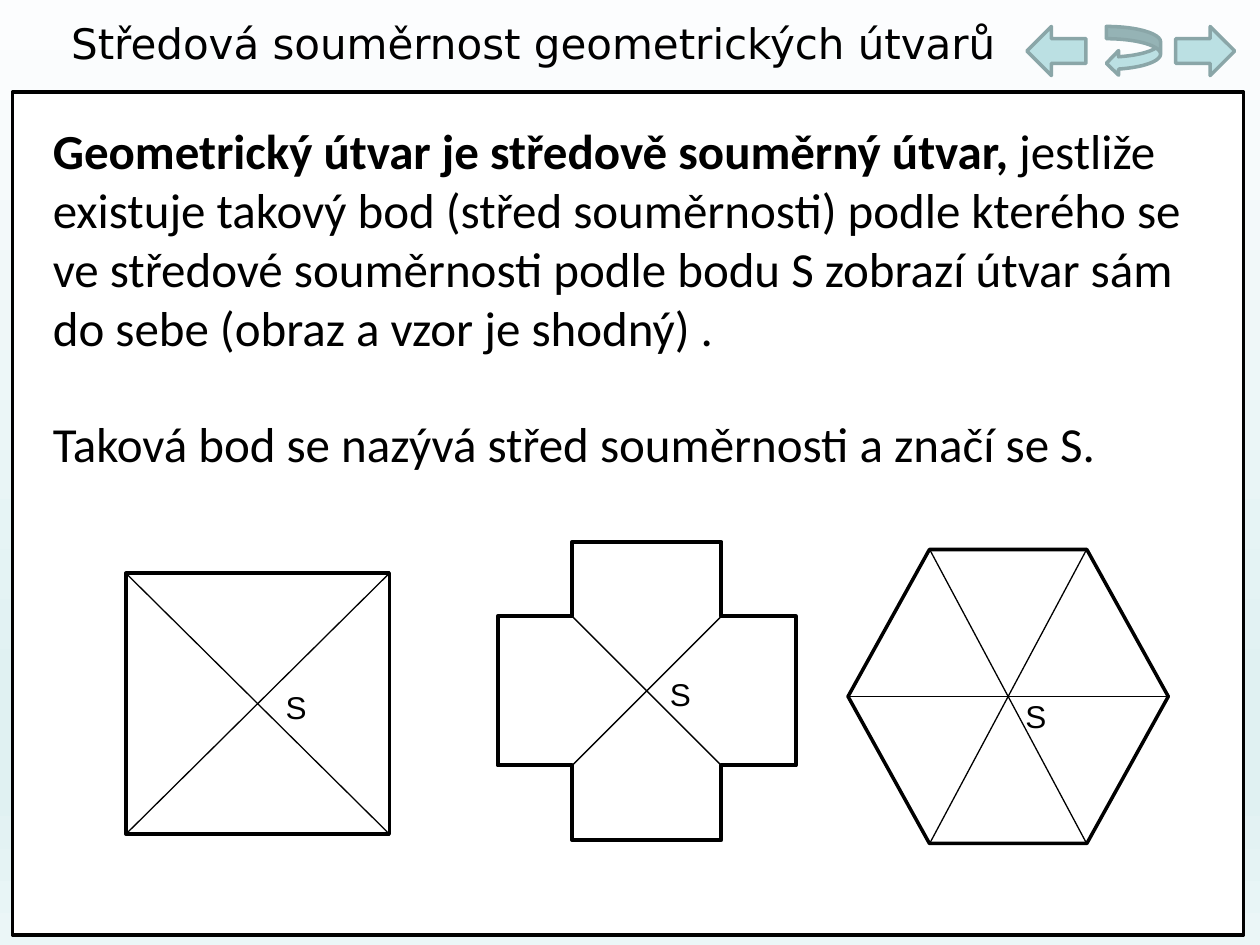
from dataclasses import dataclass

from lxml import etree
from pptx import Presentation
from pptx.dml.color import RGBColor
from pptx.enum import shapes, text
from pptx.oxml.ns import qn
from pptx.util import Pt

COLORS = {"black": "000000", "white": "FFFFFF", "arrow": "BBE0E3", "arrow_edge": "8AA6A8"}
BACKGROUND = [(0, "FCFDFE"), (74, "E0F1F2"), (83, "E0F1F2"), (100, "EBF6F7")]
MSO = shapes.MSO_SHAPE


@dataclass
class Box:
    x: float
    y: float
    w: float
    h: float

    def lengths(self) -> tuple:
        return Pt(self.x), Pt(self.y), Pt(self.w), Pt(self.h)


@dataclass
class Figure:
    """Symmetric figure; spokes start at fractions of its box and pass through S."""
    kind: MSO
    box: Box
    spokes: list
    label: tuple
    weight: float = 2
    adjust: float | None = None


@dataclass
class Passage:
    box: Box
    runs: list


FRAME = Box(7.2, 52.6, 703.4, 481.7)
TITLE = Box(9.4, 6.5, 591, 42.5)
NAVIGATION = [
    (MSO.RIGHT_ARROW, Box(671.8, 15.1, 33.8, 28.1)),
    (MSO.LEFT_ARROW, Box(586.8, 15.1, 33.8, 28.1)),
    (MSO.CURVED_LEFT_ARROW, Box(632.2, 15.1, 31, 28.1)),
]
PASSAGES = [
    Passage(Box(23, 60.5, 666, 151.2), [
        ("Geometrický útvar je středově souměrný útvar, ", True),
        ("jestliže existuje takový bod (střed souměrnosti) podle kterého se ve středové "
         "souměrnosti podle bodu S zobrazí útvar sám do sebe (obraz a vzor je shodný) .", False),
    ]),
    Passage(Box(23, 221.8, 671.8, 62.6),
            [("Taková bod se nazývá střed souměrnosti a značí se S.", False)]),
]
FIGURES = [
    Figure(MSO.RECTANGLE, Box(72, 327.6, 150.5, 149), [(0, 0), (0, 1)], (156.2, 389.5)),
    Figure(MSO.CROSS, Box(284.4, 309.6, 170.4, 170.4), [(0.25, 0.25), (0.25, 0.75)],
           (375.8, 382.3), weight=2.25),
    Figure(MSO.HEXAGON, Box(484.6, 314, 183, 168), [(0.255, 1), (0, 0.5), (0.255, 0)],
           (578.9, 394.6), adjust=0.277),
]


def rgb(name: str) -> RGBColor:
    return RGBColor.from_string(COLORS[name])


def set_background(slide) -> None:
    fill = slide.background.fill
    fill.gradient()
    fill.gradient_angle = 270
    stops = slide.element.find(".//" + qn("a:gsLst"))
    for stop in list(stops):
        stops.remove(stop)
    for percent, color in BACKGROUND:
        stop = etree.SubElement(stops, qn("a:gs"), pos=str(percent * 1000))
        etree.SubElement(stop, qn("a:srgbClr"), val=color)


def format_run(r, font: str, size: float, bold: bool = False) -> None:
    r.font.name, r.font.size, r.font.bold = font, Pt(size), bold
    r.font.color.rgb = rgb("black")


def place(sp, box: Box) -> None:
    sp.left, sp.top, sp.width, sp.height = box.lengths()


def add_outline(slide, kind: MSO, box: Box, fill: str | None = None,
                line: str = "black", weight: float = 2):
    sp = slide.shapes.add_shape(kind, *box.lengths())
    sp.shadow.inherit = False
    if fill:
        sp.fill.solid()
        sp.fill.fore_color.rgb = rgb(fill)
    else:
        sp.fill.background()
    sp.line.color.rgb = rgb(line)
    sp.line.width = Pt(weight)
    return sp


def add_spoke(slide, box: Box, fx: float, fy: float) -> None:
    """Draw a line from a point of the box to its image through the centre."""
    ends = [Pt(v) for px, py in ((fx, fy), (1 - fx, 1 - fy))
            for v in (box.x + px * box.w, box.y + py * box.h)]
    line = slide.shapes.add_connector(shapes.MSO_CONNECTOR.STRAIGHT, *ends)
    line.line.color.rgb = rgb("black")
    line.line.width = Pt(0.75)
    etree.SubElement(line._element.spPr, qn("a:effectLst"))


def add_figure(slide, figure: Figure) -> None:
    sp = add_outline(slide, figure.kind, figure.box, weight=figure.weight)
    if figure.adjust is not None:
        sp.adjustments[0] = figure.adjust
    for fx, fy in figure.spokes:
        add_spoke(slide, figure.box, fx, fy)
    label = slide.shapes.add_textbox(*Box(*figure.label, 31.7, 28.8).lengths())
    tf = label.text_frame
    tf.text = "S"
    tf.word_wrap = True
    tf.auto_size = text.MSO_AUTO_SIZE.SHAPE_TO_FIT_TEXT
    format_run(tf.paragraphs[0].runs[0], "Arial", 18)


def fill_title(sp) -> None:
    place(sp, TITLE)
    tf = sp.text_frame
    tf.text = "Středová souměrnost geometrických útvarů"
    tf.auto_size = text.MSO_AUTO_SIZE.NONE
    tf.vertical_anchor = text.MSO_ANCHOR.TOP
    p = tf.paragraphs[0]
    p.alignment = text.PP_ALIGN.CENTER
    p.space_before = Pt(2)
    format_run(p.runs[0], "DejaVu Sans", 24)


def fill_passage(sp, passage: Passage) -> None:
    place(sp, passage.box)
    tf = sp.text_frame
    tf.auto_size = text.MSO_AUTO_SIZE.NONE
    tf.vertical_anchor = text.MSO_ANCHOR.MIDDLE
    p = tf.paragraphs[0]
    p.space_before = Pt(0)
    props = p._p.get_or_add_pPr()
    props.set("marL", "0")
    props.set("indent", "0")
    etree.SubElement(props, qn("a:buNone"))
    for words, bold in passage.runs:
        r = p.add_run()
        r.text = words
        format_run(r, "Calibri", 28, bold)


def main() -> None:
    prs = Presentation()
    prs.slide_width, prs.slide_height = Pt(720), Pt(540)
    slide = prs.slides.add_slide(prs.slide_layouts.get_by_name("Two Content"))
    set_background(slide)

    frame = add_outline(slide, MSO.RECTANGLE, FRAME, fill="white")
    slide.shapes._spTree.insert(2, frame._element)  # behind the placeholders
    fill_title(slide.shapes.title)
    for number, passage in enumerate(PASSAGES, start=1):
        fill_passage(slide.placeholders[number], passage)

    for kind, box in NAVIGATION:
        add_outline(slide, kind, box, fill="arrow", line="arrow_edge")
    for figure in FIGURES:
        add_figure(slide, figure)
    prs.save("out.pptx")


if __name__ == "__main__":
    main()
